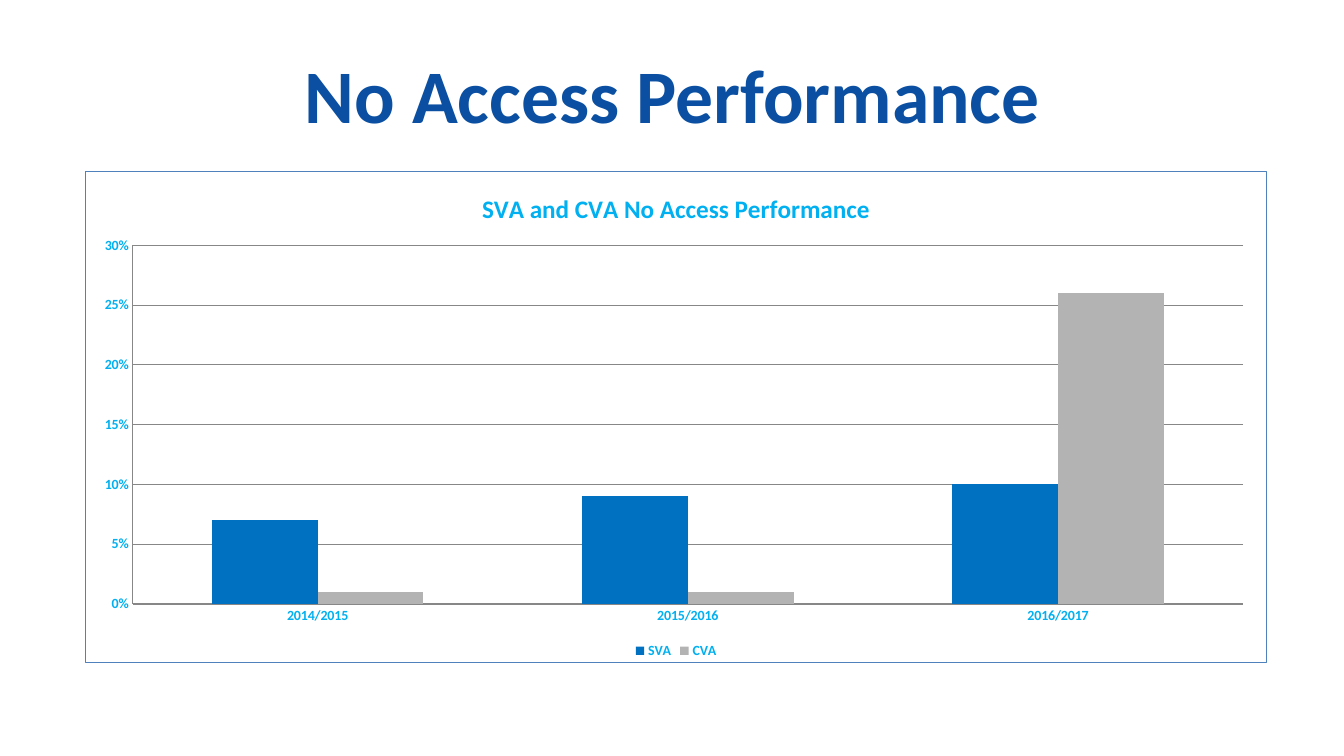
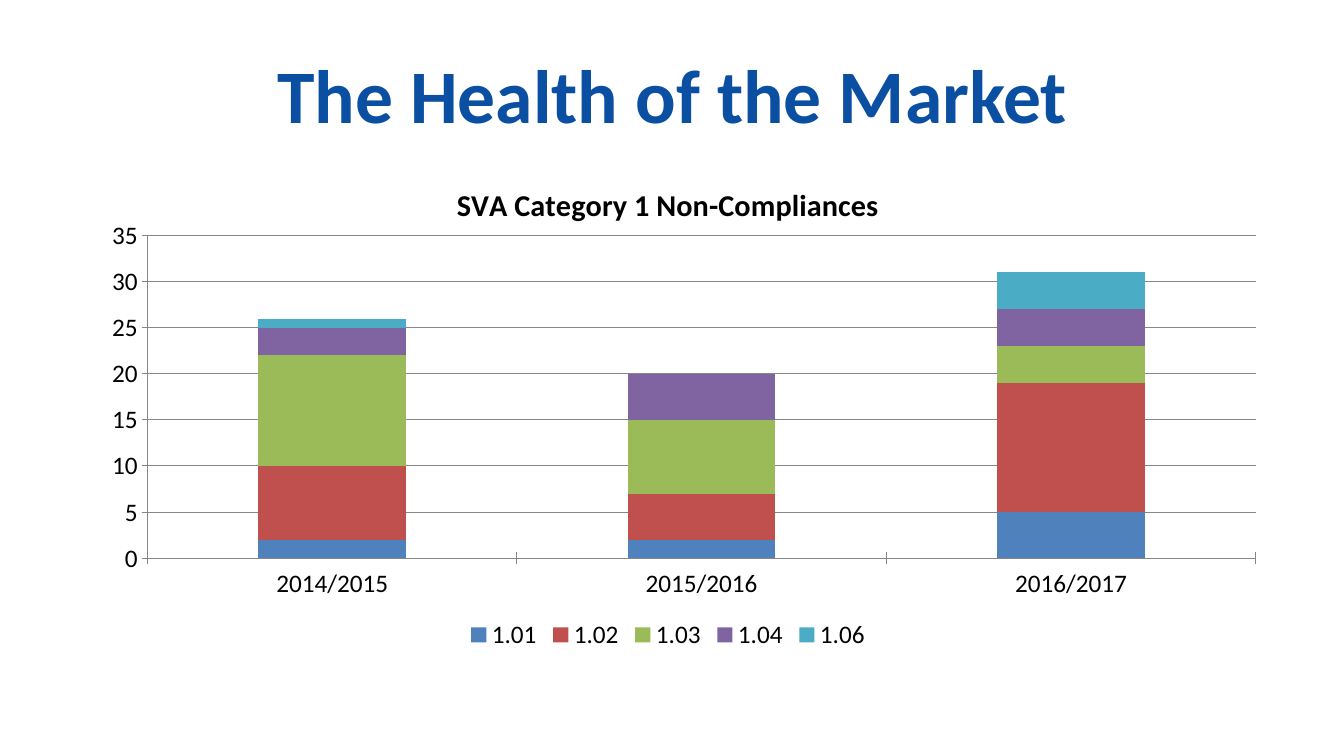
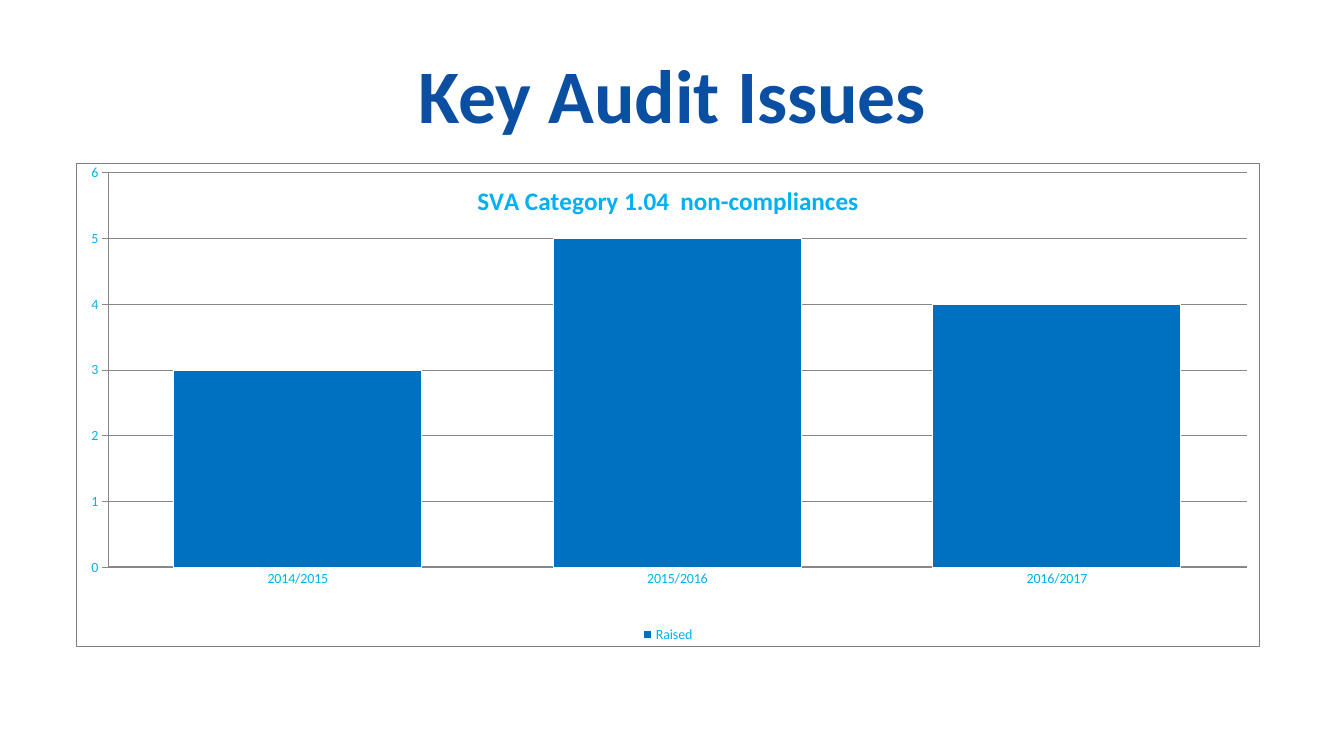
from lxml import etree
from pptx import Presentation
from pptx.chart.data import CategoryChartData
from pptx.dml.color import RGBColor
from pptx.enum.chart import XL_CHART_TYPE, XL_LEGEND_POSITION, XL_TICK_MARK
from pptx.enum.text import MSO_ANCHOR, PP_ALIGN
from pptx.oxml import parse_xml
from pptx.oxml.ns import nsdecls, qn
from pptx.util import Inches, Pt

CLUSTERED = XL_CHART_TYPE.COLUMN_CLUSTERED
STACKED = XL_CHART_TYPE.COLUMN_STACKED
NO_TICK = XL_TICK_MARK.NONE
CROSS_TICK = XL_TICK_MARK.CROSS

FONT = "Calibri"
COLORS = {
    "title": "0A4FA1", "label": "00B0F0", "black": "000000", "white": "FFFFFF",
    "axis": "878787", "border_blue": "4F81BD", "border_gray": "808080",
    "bar": "0070C0", "gray": "B3B3B3", "blue": "4F81BD", "red": "C0504D",
    "green": "9BBB59", "purple": "8064A2", "teal": "4BACC6",
}
YEARS = ["2014/2015", "2015/2016", "2016/2017"]
TITLE_BOX = (0.92, 0.4, 11.5, 1.45)

# One entry per slide; series are (name, values, color)
SLIDES = [
    dict(heading="No Access Performance", title="SVA and CVA No Access Performance",
         box=(0.84, 1.7, 11.73, 4.88), plot=(0.04, 0.15, 0.94, 0.73),
         kind=CLUSTERED, overlap=0, gap=150, size=10, title_size=18,
         color="label", bold=True, border="border_blue",
         ticks=(NO_TICK, NO_TICK), axis_width=1.5,
         maximum=0.3, unit=0.05, number_format="0%",
         series=[("SVA", (0.07, 0.09, 0.1), "bar"),
                 ("CVA", (0.01, 0.01, 0.26), "gray")]),
    dict(heading="The Health of the Market", title="SVA Category 1 Non-Compliances",
         box=(0.76, 1.62, 11.73, 4.88), plot=(0.06, 0.147, 0.937, 0.656),
         kind=STACKED, overlap=100, gap=150, size=18, title_size=21.6,
         ticks=(CROSS_TICK, CROSS_TICK), maximum=35, unit=5,
         series=[("1.01", (2, 2, 5), "blue"), ("1.02", (8, 5, 14), "red"),
                 ("1.03", (12, 8, 4), "green"), ("1.04", (3, 5, 4), "purple"),
                 ("1.06", (1, 0, 4), "teal")]),
    dict(heading="Key Audit Issues", title="SVA Category 1.04  non-compliances",
         box=(0.75, 1.62, 11.75, 4.8), plot=(0.027, 0.019, 0.962, 0.817),
         kind=STACKED, overlap=100, gap=53, size=10, title_size=18,
         color="label", border="border_gray", bar_outline="white",
         ticks=(NO_TICK, CROSS_TICK), axis_width=1.5,
         maximum=6, unit=1, title_overlay=True,
         series=[("Raised", (3, 5, 4), "bar")]),
]


def rgb(name):
    return RGBColor.from_string(COLORS[name])


def style_font(font, size, color, bold):
    font.name = FONT
    font.size = Pt(size)
    font.bold = bold
    font.color.rgb = rgb(color)


def style_line(line, color, width=0.75):
    line.color.rgb = rgb(color)
    line.width = Pt(width)


def add_heading(slide, text, box):
    shape = slide.shapes.add_textbox(*map(Inches, box))
    text_frame = shape.text_frame
    text_frame.word_wrap = True
    text_frame.vertical_anchor = MSO_ANCHOR.TOP
    text_frame.margin_top = Inches(0.08)
    text_frame.text = text
    paragraph = text_frame.paragraphs[0]
    paragraph.alignment = PP_ALIGN.CENTER
    style_font(paragraph.runs[0].font, 54, "title", True)


def set_plot_area(chart, plot):
    """Place the inner plot area, given as fractions of the chart box."""
    plot_area = chart.element.find(".//" + qn("c:plotArea"))
    for old_layout in plot_area.findall(qn("c:layout")):
        plot_area.remove(old_layout)
    layout = parse_xml(f"<c:layout {nsdecls('c')}><c:manualLayout/></c:layout>")
    settings = [("layoutTarget", "inner"), ("xMode", "edge"), ("yMode", "edge")]
    settings += zip("xywh", map(str, plot))
    for tag, value in settings:
        etree.SubElement(layout[0], qn("c:" + tag)).set("val", value)
    plot_area.insert(0, layout)


def set_border(chart, color):
    border = parse_xml(
        f'<c:spPr {nsdecls("c", "a")}><a:solidFill><a:srgbClr val="{COLORS["white"]}"/>'
        f'</a:solidFill><a:ln w="{Pt(0.75)}"><a:solidFill>'
        f'<a:srgbClr val="{COLORS[color]}"/></a:solidFill></a:ln></c:spPr>')
    chart.element.find(qn("c:txPr")).addprevious(border)


def add_column_chart(slide, box, kind, series, title, title_size, size, plot, ticks,
                     maximum, unit, overlap, gap, number_format="General",
                     color="black", bold=False, border=None, bar_outline=None,
                     axis_width=0.75, title_overlay=False):
    data = CategoryChartData(number_format=number_format)
    data.categories = YEARS
    for name, values, _ in series:
        data.add_series(name, values)
    chart = slide.shapes.add_chart(kind, *map(Inches, box), data).chart
    style_font(chart.font, size, "black", False)

    # Title and legend
    chart.has_title = True
    chart.chart_title.text_frame.text = title
    run = chart.chart_title.text_frame.paragraphs[0].runs[0]
    style_font(run.font, title_size, color, True)
    if title_overlay:
        chart.element.find(f".//{qn('c:title')}/{qn('c:overlay')}").set("val", "1")
    chart.has_legend = True
    chart.legend.position = XL_LEGEND_POSITION.BOTTOM
    chart.legend.include_in_layout = False
    style_font(chart.legend.font, size, color, bold)

    # Axes
    category_axis, value_axis = chart.category_axis, chart.value_axis
    for axis, tick, width in zip((category_axis, value_axis), ticks, (axis_width, 0.75)):
        axis.major_tick_mark = tick
        axis.minor_tick_mark = NO_TICK
        style_line(axis.format.line, "axis", width)
        style_font(axis.tick_labels.font, size, color, bold)
    value_axis.minimum_scale = 0
    value_axis.maximum_scale = maximum
    value_axis.major_unit = unit
    value_axis.tick_labels.number_format = number_format
    value_axis.tick_labels.number_format_is_linked = False
    value_axis.has_major_gridlines = True
    style_line(value_axis.major_gridlines.format.line, "axis")

    # Columns
    columns = chart.plots[0]
    columns.vary_by_categories = False
    columns.overlap = overlap
    columns.gap_width = gap
    for column, (_, _, fill) in zip(columns.series, series):
        column.format.fill.solid()
        column.format.fill.fore_color.rgb = rgb(fill)
        if bar_outline:
            style_line(column.format.line, bar_outline)

    set_plot_area(chart, plot)
    if border:
        set_border(chart, border)


def add_chart_slide(presentation, heading, **chart_settings):
    slide = presentation.slides.add_slide(presentation.slide_layouts[6])
    add_heading(slide, heading, TITLE_BOX)
    add_column_chart(slide, **chart_settings)


def main():
    presentation = Presentation()
    presentation.slide_width = Inches(13.33)
    presentation.slide_height = Inches(7.5)
    for settings in SLIDES:
        add_chart_slide(presentation, **settings)
    presentation.save("out.pptx")


if __name__ == "__main__":
    main()
